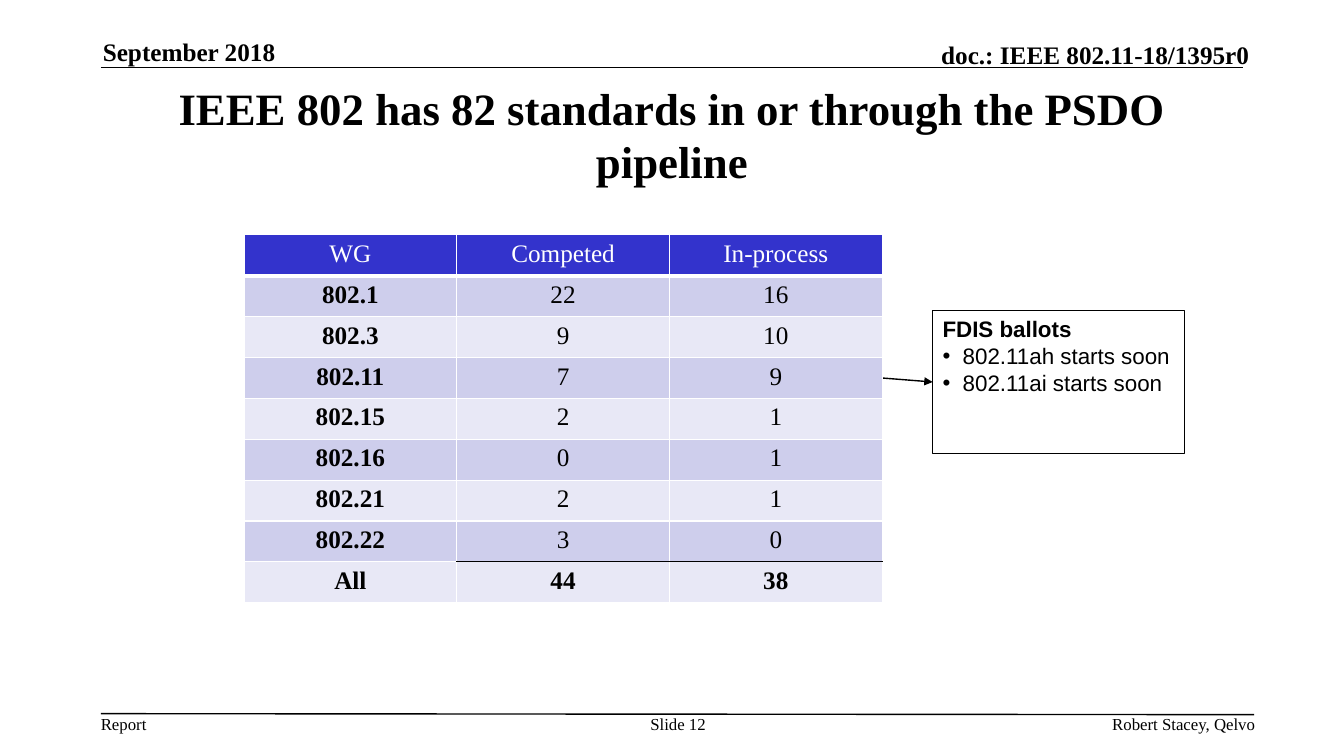
"""Build the slide that counts IEEE 802 standards in the PSDO pipeline."""
import pptx
import pptx.dml.color
import pptx.enum.shapes
import pptx.enum.text
import pptx.oxml
import pptx.oxml.ns
import pptx.util

Inches = pptx.util.Inches
Pt = pptx.util.Pt
ALIGN = pptx.enum.text.PP_ALIGN
ANCHOR = pptx.enum.text.MSO_ANCHOR
NAMESPACE = pptx.oxml.ns.nsdecls("a")


def color(code):
    return pptx.dml.color.RGBColor.from_string(code)


def write(para, text, align, size, bold=False, code="000000", name="Times New Roman"):
    para.alignment = align
    span = para.add_run()
    span.text = text
    formats = {"size": Pt(size), "bold": bold, "name": name}
    for key, value in formats.items():
        setattr(span.font, key, value)
    span.font.color.rgb = color(code)


deck = pptx.Presentation()
deck.slide_width = Inches(13.33)
deck.slide_height = Inches(7.5)
page = deck.slides.add_slide(deck.slide_layouts[6])

rules = [
    (1, 0.67, 12.33, 0.67, False),
    (1, 7.08, 12.44, 7.09, False),
    (8.75, 3.75, 9.25, 3.79, True),
]
for left, top, right, bottom, arrow in rules:
    rule = page.shapes.add_connector(
        pptx.enum.shapes.MSO_CONNECTOR.STRAIGHT,
        Inches(left), Inches(top), Inches(right), Inches(bottom),
    )
    rule.line.color.rgb = color("000000")
    rule.line.width = Pt(1)
    if arrow:
        rule.line._get_or_add_ln().append(
            pptx.oxml.parse_xml(f'<a:tailEnd {NAMESPACE} type="triangle"/>'))
    rule._element.spPr.append(pptx.oxml.parse_xml(f"<a:effectLst {NAMESPACE}/>"))

labels = [
    ("September 2018", 1.02, 0.36, 2.73, 0.3, ANCHOR.BOTTOM, ALIGN.LEFT, 18, True),
    ("doc.: IEEE 802.11-18/1395r0", 7.29, 0.39, 5.1, 0.3, ANCHOR.BOTTOM, ALIGN.RIGHT, 18, True),
    ("IEEE 802 has 82 standards in or through the PSDO pipeline",
     1.1, 0.8, 11.13, 1.06, ANCHOR.MIDDLE, ALIGN.CENTER, 32, True),
    ("Report", 1, 7.08, 0.46, 0.2, ANCHOR.TOP, ALIGN.LEFT, 12, False),
    ("Slide 12", 6.34, 7.08, 0.77, 0.4, ANCHOR.TOP, ALIGN.CENTER, 12, False),
    ("Robert Stacey, Qelvo", 7.81, 7.08, 4.64, 0.2, ANCHOR.TOP, ALIGN.RIGHT, 12, False),
]
for text, left, top, width, height, anchor, align, size, bold in labels:
    box = page.shapes.add_textbox(Inches(left), Inches(top), Inches(width), Inches(height))
    frame_formats = {
        "word_wrap": text != "Report", "vertical_anchor": anchor,
        "margin_left": 0, "margin_right": 0, "margin_top": 0, "margin_bottom": 0,
    }
    for key, value in frame_formats.items():
        setattr(box.text_frame, key, value)
    write(box.text_frame.paragraphs[0], text, align, size, bold)

ballots = page.shapes.add_shape(
    pptx.enum.shapes.MSO_SHAPE.RECTANGLE,
    Inches(9.25), Inches(3.08), Inches(2.5), Inches(1.42),
)
ballots.shadow.inherit = False
ballots.fill.solid()
ballots.fill.fore_color.rgb = color("FFFFFF")
ballots.line.color.rgb = color("000000")
ballots.line.width = Pt(1)
ballots.text_frame.word_wrap = True
ballots.text_frame.vertical_anchor = ANCHOR.TOP
write(ballots.text_frame.paragraphs[0], "FDIS ballots", ALIGN.LEFT, 16, True, name="Arial")
for text in ("802.11ah starts soon", "802.11ai starts soon"):
    para = ballots.text_frame.add_paragraph()
    write(para, text, ALIGN.LEFT, 16, name="Arial")
    props = para._p.get_or_add_pPr()
    props.set("marL", str(Inches(0.2)))
    props.set("indent", str(Inches(-0.2)))
    props.append(pptx.oxml.parse_xml(f'<a:buFont {NAMESPACE} typeface="Arial"/>'))
    props.append(pptx.oxml.parse_xml(f'<a:buChar {NAMESPACE} char="•"/>'))

rows = [
    ("WG", "Competed", "In-process"),
    ("802.1", "22", "16"),
    ("802.3", "9", "10"),
    ("802.11", "7", "9"),
    ("802.15", "2", "1"),
    ("802.16", "0", "1"),
    ("802.21", "2", "1"),
    ("802.22", "3", "0"),
    ("All", "44", "38"),
]
last = len(rows) - 1
table = page.shapes.add_table(
    len(rows), 3, Inches(2.42), Inches(2.33), Inches(6.33), Inches(3.65)
).table
for row, values in enumerate(rows):
    for column, text in enumerate(values):
        cell = table.cell(row, column)
        header = row == 0
        bold = not header and (column == 0 or row == last)
        write(cell.text_frame.paragraphs[0], text, ALIGN.CENTER, 18, bold,
              "FFFFFF" if header else "000000")
        borders = {side: ("FFFFFF", 1) for side in ("lnL", "lnR", "lnT", "lnB")}
        if header:
            borders["lnB"] = ("FFFFFF", 3)
        if column > 0 and row >= last - 1:
            borders["lnT" if row == last else "lnB"] = ("000000", 1)
        for side, (code, width) in borders.items():
            cell._tc.get_or_add_tcPr().append(pptx.oxml.parse_xml(
                f'<a:{side} {NAMESPACE} w="{Pt(width)}"><a:solidFill>'
                f'<a:srgbClr val="{code}"/></a:solidFill></a:{side}>'))
        cell.fill.solid()
        cell.fill.fore_color.rgb = color(
            "3333CC" if header else "CECEEC" if row % 2 else "E8E8F6")

deck.save("out.pptx")
